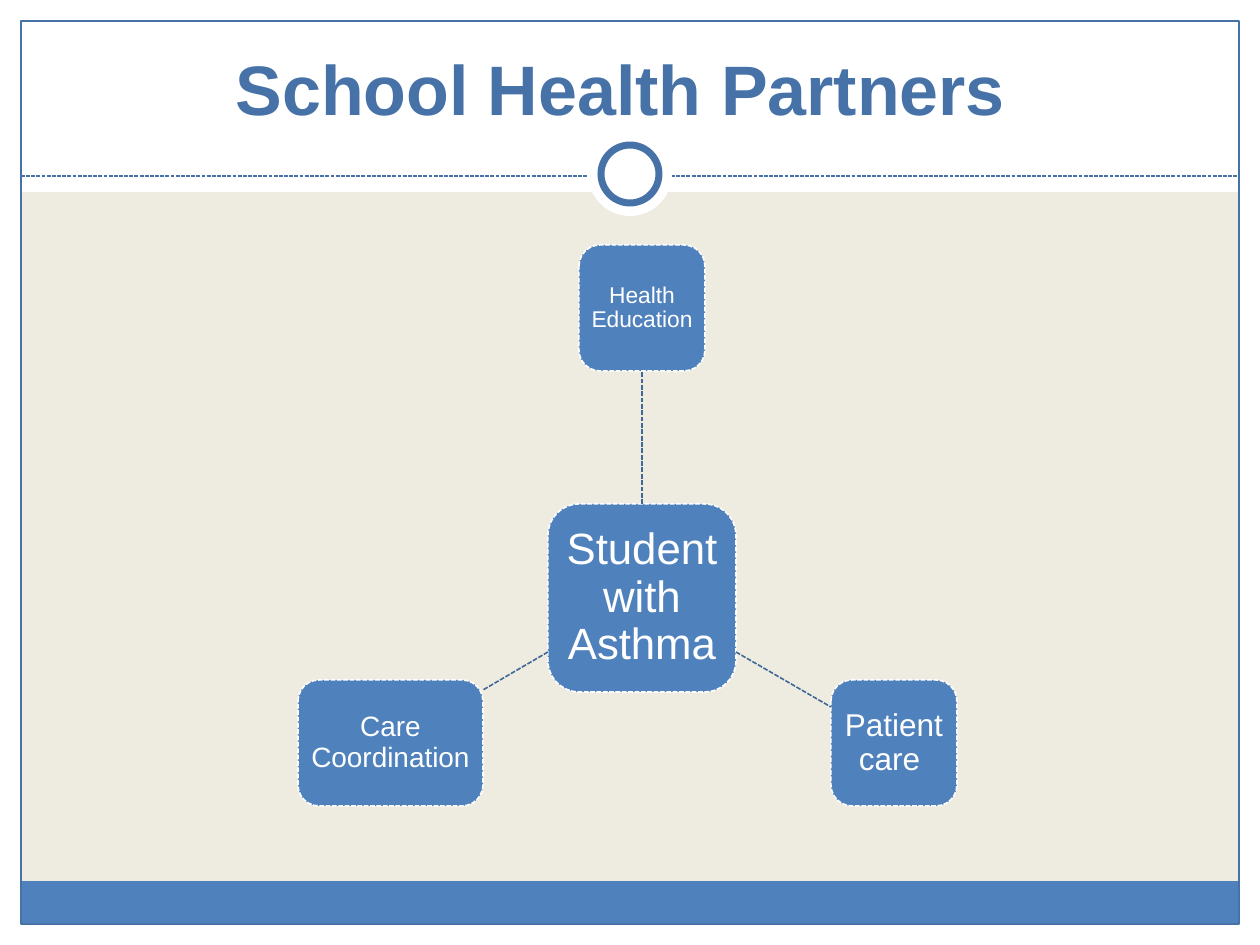
from dataclasses import dataclass

from lxml import etree
from pptx import Presentation
from pptx.dml.color import RGBColor
from pptx.enum.dml import MSO_LINE
from pptx.enum.shapes import MSO_CONNECTOR, MSO_SHAPE
from pptx.enum.text import MSO_ANCHOR, MSO_AUTO_SIZE, PP_ALIGN
from pptx.oxml.ns import qn
from pptx.util import Pt

RECT, ROUND, OVAL = MSO_SHAPE.RECTANGLE, MSO_SHAPE.ROUNDED_RECTANGLE, MSO_SHAPE.OVAL
STRAIGHT = MSO_CONNECTOR.STRAIGHT
DASH = MSO_LINE.SQUARE_DOT  # written as sysDot, replaced below by sysDash
CENTER = PP_ALIGN.CENTER
MIDDLE, BOTTOM = MSO_ANCHOR.MIDDLE, MSO_ANCHOR.BOTTOM
TOP_SIDE, LOW_SIDE = 0, 2
SCALE = 914400 / 126  # EMU per px
WIDE, HIGH = 1260, 945


@dataclass(frozen=True)
class Theme:
    font: str = "Arial"
    back: str = "EEECE1"
    white: str = "FFFFFF"
    blue: str = "4F81BD"
    edge: str = "4672A7"
    link: str = "3F6797"
    title: int = 40
    hub: int = 25
    thin: float = 0.75
    dash: float = 0.9
    ring: float = 4


def emu(px):
    return round(px * SCALE)


def rgb(code):
    return RGBColor.from_string(code)


class Deck:
    def __init__(self, theme):
        self.theme = theme
        self.prs = Presentation()
        self.prs.slide_width, self.prs.slide_height = emu(WIDE), emu(HIGH)
        self.slide = self.prs.slides.add_slide(self.prs.slide_layouts[5])
        fill = self.slide.background.fill
        fill.solid()
        fill.fore_color.rgb = rgb(theme.back)

    def stroke(self, line, color, width, dash=False):
        line.color.rgb = rgb(color)
        line.width = Pt(width)
        if dash:
            line.dash_style = DASH
            line._ln.find(qn("a:prstDash")).set("val", "sysDash")

    def shape(self, kind, box, fill=None, line=None, width=0, dash=False):
        shape = self.slide.shapes.add_shape(kind, *map(emu, box))
        shape.shadow.inherit = False
        if fill:
            shape.fill.solid()
            shape.fill.fore_color.rgb = rgb(fill)
        else:
            shape.fill.background()
        if line:
            self.stroke(shape.line, line, width, dash)
        else:
            shape.line.fill.background()
        return shape

    def text(self, frame, words, size, color, anchor, bold=False):
        frame.word_wrap = True
        frame.auto_size = MSO_AUTO_SIZE.NONE
        frame.vertical_anchor = anchor
        para = frame.paragraphs[0]
        para.alignment = CENTER
        run = para.add_run()
        run.text = words
        font = run.font
        font.name, font.size, font.bold = self.theme.font, Pt(size), bold
        font.color.rgb = rgb(color)
        return para

    def title(self, words, box):
        title = self.slide.shapes.title
        title.left, title.top, title.width, title.height = map(emu, box)
        self.text(title.text_frame, words, self.theme.title, self.theme.edge,
                  BOTTOM, bold=True)
        self.slide.shapes._spTree.append(title._element)  # bring to front

    def node(self, words, box, size, inset):
        t = self.theme
        node = self.shape(ROUND, box, t.blue, t.white, t.dash, dash=True)
        frame = node.text_frame
        frame.margin_left = frame.margin_right = emu(inset)
        frame.margin_top = frame.margin_bottom = emu(inset)
        self.text(frame, words, size, t.white, MIDDLE).line_spacing = 0.9
        return node

    def line(self, start, end, color, width):
        line = self.slide.shapes.add_connector(STRAIGHT, *map(emu, start + end))
        self.stroke(line.line, color, width, dash=True)
        etree.SubElement(line._element.spPr, qn("a:effectLst"))
        return line


def main():
    t = Theme()
    deck = Deck(t)

    # Frame: white margins, footer band, outline and ring
    rim = 21
    for box in ((0, HIGH - rim, WIDE, rim), (0, 0, WIDE, 192),
                (0, 0, rim, HIGH), (WIDE - rim, 0, rim, HIGH)):
        deck.shape(RECT, box, t.white)
    deck.shape(RECT, (rim, 881, WIDE - 2 * rim, 43), t.blue)
    deck.shape(RECT, (rim, rim, WIDE - 2 * rim, HIGH - 2 * rim),
               line=t.edge, width=t.thin)
    deck.line((rim, 176), (WIDE - rim, 176), t.edge, t.thin)
    deck.shape(OVAL, (588, 132, 84, 84), t.white)
    deck.shape(OVAL, (601, 145, 58, 58), t.white, t.edge, t.ring)
    deck.title("School Health Partners ", (42, 31, 1176, 105))

    # Partners around the student
    hub = deck.node("Student with Asthma", (548, 504, 188, 188), t.hub, 9)
    side, low = 126, 680
    teach = deck.node("Health Education", (579, 245, side, side), 13, 5)
    deck.node("Patient care ", (831, low, side, side), 18, 6)
    deck.node("Care Coordination", (298, low, 185, side), 16, 5)

    up = deck.line((642, 504), (642, 371), t.link, t.dash)
    up.begin_connect(hub, TOP_SIDE)
    up.end_connect(teach, LOW_SIDE)
    deck.line((736, 652), (831, 707), t.link, t.dash)
    deck.line((548, 652), (483, 690), t.link, t.dash)

    deck.prs.save("out.pptx")


if __name__ == "__main__":
    main()
